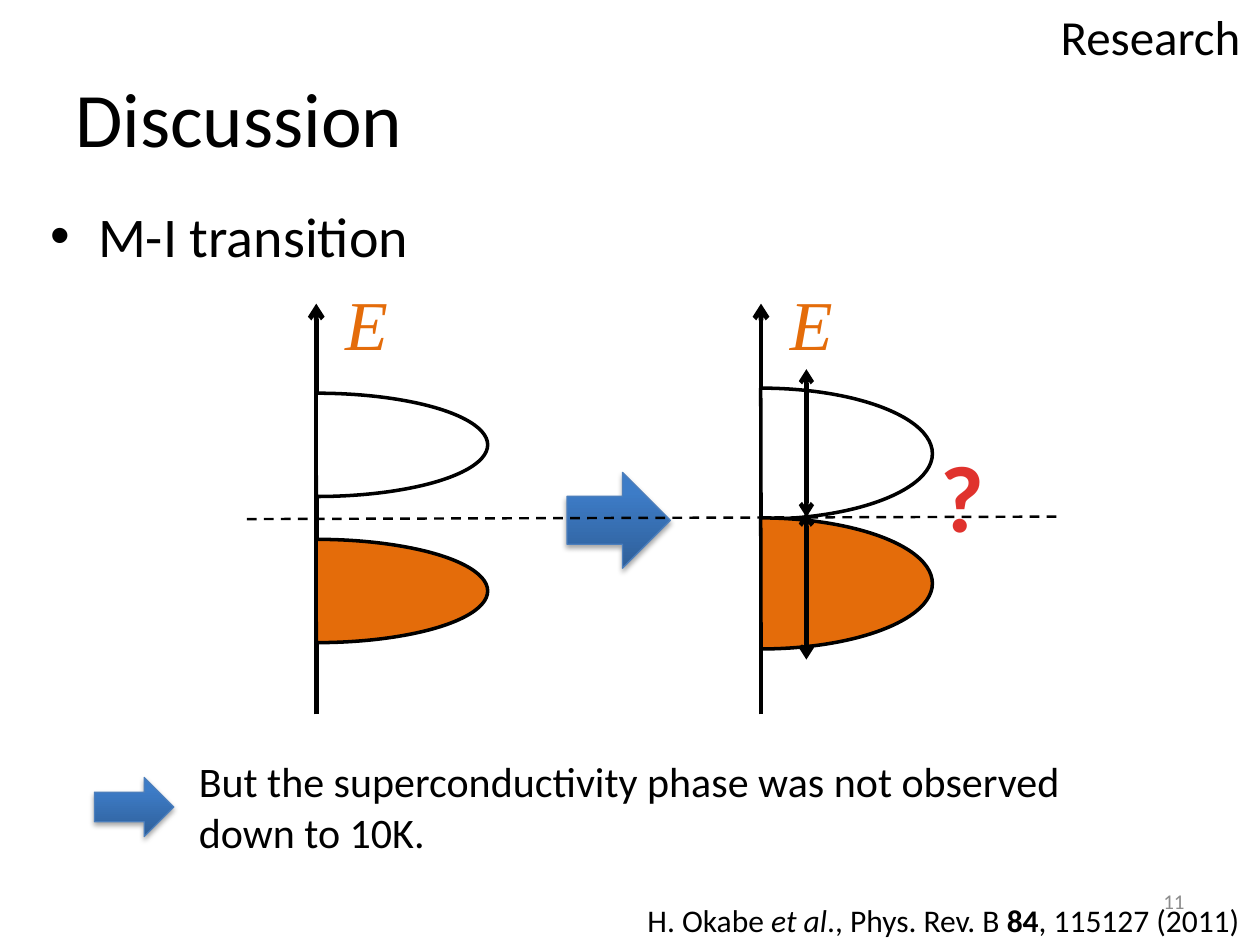
from dataclasses import dataclass, field

from lxml.etree import SubElement
from pptx import Presentation
from pptx.dml.color import RGBColor
from pptx.enum.dml import MSO_LINE
from pptx.enum.shapes import MSO_CONNECTOR, MSO_SHAPE
from pptx.enum.text import MSO_ANCHOR, PP_ALIGN
from pptx.oxml.ns import qn
from pptx.util import Inches, Pt

# The page is a grid of 100 columns by 75 rows of square cells.
COLUMNS, ROWS = 100, 75
CELL = Inches(10) / COLUMNS
COLORS = {
    "ink": "000000", "paper": "FFFFFF", "orange": "E46C0A", "red": "E0322D",
    "gray": "8C8C8C", "arrow_dark": "2F5F99", "arrow_light": "3D7CC7",
    "arrow_edge": "4B7EBC",
}


@dataclass
class Area:
    left: float
    top: float
    width: float
    height: float

    def lengths(self) -> list[int]:
        return [cells(n) for n in (self.left, self.top, self.width, self.height)]


@dataclass
class Label:
    area: Area
    spans: list[tuple[str, dict]]
    size: float
    color: str = "ink"
    font: str = "Calibri"
    frame: dict = field(default_factory=dict)
    para: dict = field(default_factory=dict)


@dataclass
class Band:
    top: float
    height: float
    color: str


@dataclass
class Panel:
    """An energy axis with the bands that lean on it."""
    axis: float
    bands: list[Band]


def cells(count: float) -> int:
    return round(count * CELL)


def rgb(name: str) -> RGBColor:
    return RGBColor.from_string(COLORS[name])


def set_all(target, values: dict) -> None:
    for name, value in values.items():
        setattr(target, name, value)


def draw_label(page, label: Label):
    box = page.shapes.add_textbox(*label.area.lengths())
    set_all(box.text_frame, {"word_wrap": True, **label.frame})
    para = box.text_frame.paragraphs[0]
    set_all(para, label.para)
    for text, style in label.spans:
        span = para.add_run()
        span.text = text
        set_all(span.font, {"name": label.font, "size": Pt(label.size), **style})
        span.font.color.rgb = rgb(label.color)
    return para


def add_bullet(para, indent: float) -> None:
    properties = para._p.get_or_add_pPr()
    properties.set("marL", str(cells(indent)))
    properties.set("indent", str(-cells(indent)))
    SubElement(properties, qn("a:buFont"), typeface="Arial")
    SubElement(properties, qn("a:buChar"), char="•")


def draw_line(page, start: tuple, end: tuple, width: float,
              heads: tuple = (), dash=None) -> None:
    ends = [cells(n) for n in (*start, *end)]
    line = page.shapes.add_connector(MSO_CONNECTOR.STRAIGHT, *ends)
    line.line.color.rgb = rgb("ink")
    set_all(line.line, {"width": Pt(width), "dash_style": dash})
    for head in heads:
        SubElement(line.line._get_or_add_ln(), qn(f"a:{head}"), type="arrow")
    SubElement(line._element.spPr, qn("a:effectLst"))


def draw_band(page, axis: float, band: Band) -> None:
    """Draw the right half of an ellipse centred on the axis."""
    width = 27.2
    area = Area(axis - width / 2, band.top, width, band.height)
    shape = page.shapes.add_shape(MSO_SHAPE.CHORD, *area.lengths())
    shape.adjustments[0], shape.adjustments[1] = 53.82, 162
    shape.rotation = 180
    shape.fill.solid()
    shape.fill.fore_color.rgb = rgb(band.color)
    shape.line.color.rgb = rgb("ink")
    shape.line.width = Pt(2)
    shape.shadow.inherit = False


def draw_block_arrow(page, area: Area) -> None:
    shape = page.shapes.add_shape(MSO_SHAPE.RIGHT_ARROW, *area.lengths())
    shape.fill.gradient()
    shape.fill.gradient_angle = 90
    stops = zip(shape.fill.gradient_stops, ("arrow_dark", "arrow_light"), (0, 0.8))
    for stop, color, position in stops:
        stop.color.rgb = rgb(color)
        stop.position = position
    shape.line.color.rgb = rgb("arrow_edge")
    shape.line.width = Pt(0.75)
    shape.shadow.inherit = False
    effects = shape._element.spPr.find(qn("a:effectLst"))
    shadow = SubElement(effects, qn("a:outerShdw"), blurRad=str(Pt(3.1)),
                        dist=str(Pt(1.8)), dir="5400000", rotWithShape="0")
    color = SubElement(shadow, qn("a:srgbClr"), val=COLORS["ink"])
    SubElement(color, qn("a:alpha"), val="35000")


def draw_panel(page, panel: Panel) -> None:
    draw_line(page, (panel.axis, 56.7), (panel.axis, 24.1), 2.75, ("tailEnd",))
    draw_label(page, Label(Area(panel.axis + 1.3, 21.8, 6.6, 5.8),
                           [("E", {"italic": True})], 40, "orange", "Times New Roman"))
    for band in panel.bands:
        draw_band(page, panel.axis, band)


MIDDLE = {"vertical_anchor": MSO_ANCHOR.MIDDLE}
NO_WRAP = {"word_wrap": False}
LABELS = [
    Label(Area(5, 3, 90, 12.5), [("Discussion", {})], 44, frame=MIDDLE),
    Label(Area(83.2, 0, 16.4, 5.7), [("Research", {})], 28, frame=NO_WRAP),
    Label(Area(14.8, 59.5, 71.7, 9.1),
          [("But the superconductivity phase was not observed down to 10K.", {})], 24),
    Label(Area(71.7, 69.5, 23.3, 4), [("11", {})], 12, "gray", frame=MIDDLE,
          para={"alignment": PP_ALIGN.RIGHT}),
    Label(Area(50.4, 71, 49.5, 4),
          [("H. Okabe ", {}), ("et al", {"italic": True}), ("., Phys. Rev. B ", {}),
           ("84", {"bold": True}), (", 115127 (2011)", {})], 18, frame=NO_WRAP),
]
BULLET = Label(Area(3, 15.5, 96.6, 7.3), [("M-I transition", {})], 32,
               para={"space_before": Pt(6.4)})
QUESTION = Label(Area(73.2, 34.3, 6.4, 12.1), [("?", {"bold": True})], 54, "red",
                 frame=NO_WRAP, para={"alignment": PP_ALIGN.CENTER})
PANELS = [
    Panel(25.1, [Band(31.2, 8.2, "paper"), Band(42.8, 8.2, "orange")]),
    Panel(60.4, [Band(30.8, 10.4, "paper"), Band(41.1, 10.4, "orange")]),
]


def main() -> None:
    deck = Presentation()
    deck.slide_width, deck.slide_height = cells(COLUMNS), cells(ROWS)
    page = deck.slides.add_slide(deck.slide_layouts[6])
    for label in LABELS:
        draw_label(page, label)
    add_bullet(draw_label(page, BULLET), 3.8)
    for panel in PANELS:
        draw_panel(page, panel)
    for top in (29.3, 40.6):
        draw_line(page, (64, top), (64, top + 11.75), 2.5, ("headEnd", "tailEnd"))
    for area in (Area(7.5, 61.7, 6.3, 4.7), Area(45, 37.5, 8.2, 7.6)):
        draw_block_arrow(page, area)
    draw_line(page, (19.6, 41.2), (83.9, 41), 1.4, dash=MSO_LINE.DASH)
    draw_label(page, QUESTION)
    deck.save("out.pptx")


if __name__ == "__main__":
    main()
